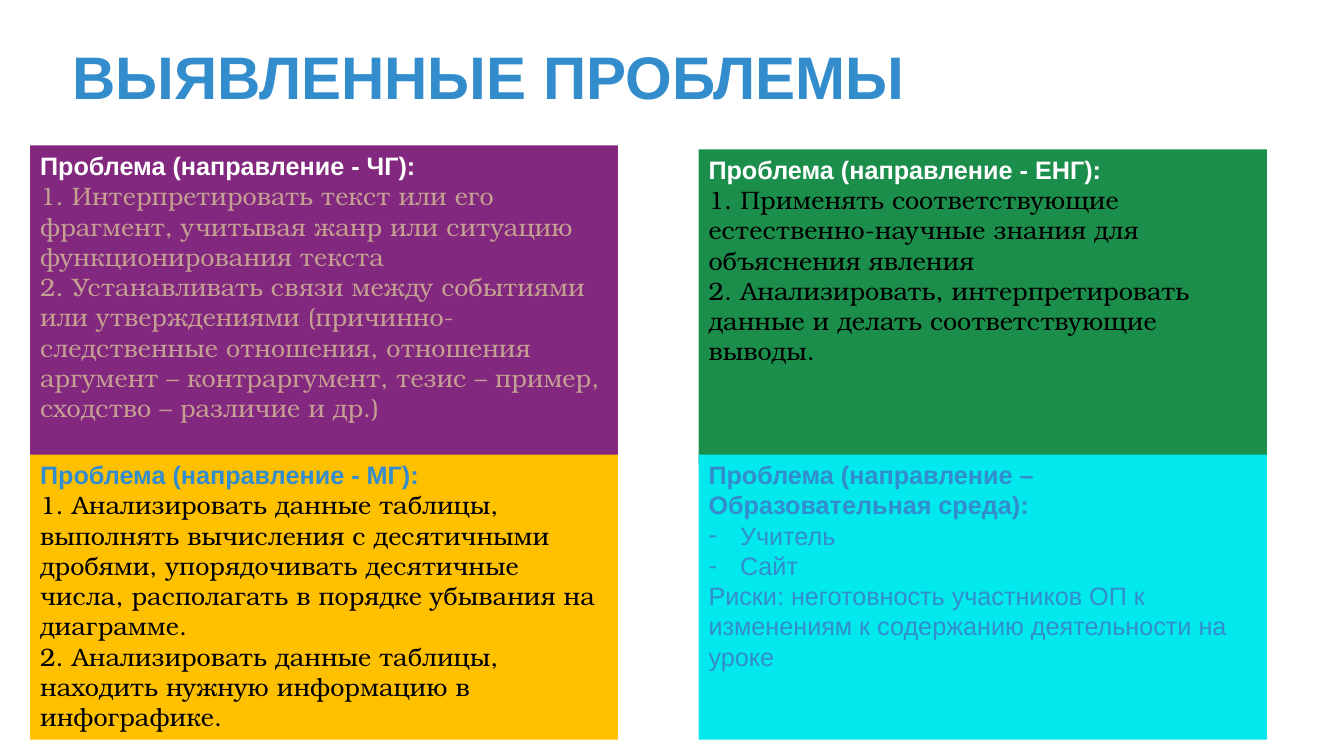
from pptx import Presentation
from pptx.dml.color import RGBColor
from pptx.enum import text as tx
from pptx.oxml import parse_xml
from pptx.oxml.ns import nsdecls
from pptx.util import Pt

theme = {
    "blue": "338DCD", "white": "FFFFFF", "black": "000000", "sand": "C49F92",
    "plum": "82287E", "green": "1B8E4B", "gold": "FFC000", "cyan": "01E9EC",
    "sans": "Arial", "serif": "TeX Gyre Bonum",
    "title": 42.9, "body": 18,
}

deck = Presentation()
deck.slide_width, deck.slide_height = Pt(960), Pt(540)
slide = deck.slides.add_slide(deck.slide_layouts[6])


def add_box(left, top, width, height):
    box = slide.shapes.add_textbox(Pt(left), Pt(top), Pt(width), Pt(height))
    box.text_frame.word_wrap = True
    return box


def style(para, size, color, face="sans", bold=False):
    font = para.font
    font.name = theme[face]
    font.size = Pt(theme[size])
    font.bold = bold
    font.color.rgb = RGBColor.from_string(theme[color])


frame = add_box(44.6, 9.4, 824.4, 95).text_frame
frame.vertical_anchor = tx.MSO_ANCHOR.MIDDLE
title = frame.paragraphs[0]
title.text = "ВЫЯВЛЕННЫЕ ПРОБЛЕМЫ"
title.line_spacing = 0.9
style(title, "title", "blue", bold=True)

left, right = (21.6, 419.8), (499, 406)
low = 324.7
cards = [
    (left, 103.9, 247, "plum", "white", "sand", "serif", [
        "Проблема (направление - ЧГ):",
        "1. Интерпретировать текст или его фрагмент, учитывая жанр или ситуацию функционирования текста",
        "2. Устанавливать связи между событиями или утверждениями (причинно-следственные отношения, "
        "отношения аргумент – контраргумент, тезис – пример, сходство – различие и др.)"]),
    (right, 106.7, 225.4, "green", "white", "black", "serif", [
        "Проблема (направление - ЕНГ):",
        "1. Применять соответствующие естественно-научные знания для объяснения явления",
        "2. Анализировать, интерпретировать данные и делать соответствующие выводы."]),
    (left, low, 203.6, "gold", "blue", "black", "serif", [
        "Проблема (направление - МГ):",
        "1. Анализировать данные таблицы, выполнять вычисления с десятичными дробями, "
        "упорядочивать десятичные числа, располагать в порядке убывания на диаграмме.",
        "2. Анализировать данные таблицы, находить нужную информацию в инфографике."]),
    (right, low, 203.6, "cyan", "blue", "blue", "sans", [
        "Проблема (направление – Образовательная среда):",
        "Учитель",
        "Сайт",
        "Риски: неготовность участников ОП к изменениям к содержанию деятельности на уроке"]),
]
points = {"Учитель", "Сайт"}

for (x, width), top, height, fill, head, color, face, lines in cards:
    box = add_box(x, top, width, height)
    box.fill.solid()
    box.fill.fore_color.rgb = RGBColor.from_string(theme[fill])
    frame = box.text_frame
    for i, line in enumerate(lines):
        para = frame.add_paragraph() if i else frame.paragraphs[0]
        para.text = line
        if line in points:
            props = para._p.get_or_add_pPr()
            props.set("marL", str(Pt(22.5)))
            props.set("indent", str(-Pt(22.5)))
            props.append(parse_xml(f'<a:buFont {nsdecls("a")} typeface="{theme["sans"]}"/>'))
            props.append(parse_xml(f'<a:buChar {nsdecls("a")} char="-"/>'))
        if i:
            style(para, "body", color, face)
        else:
            style(para, "body", head, bold=True)

deck.save("out.pptx")
